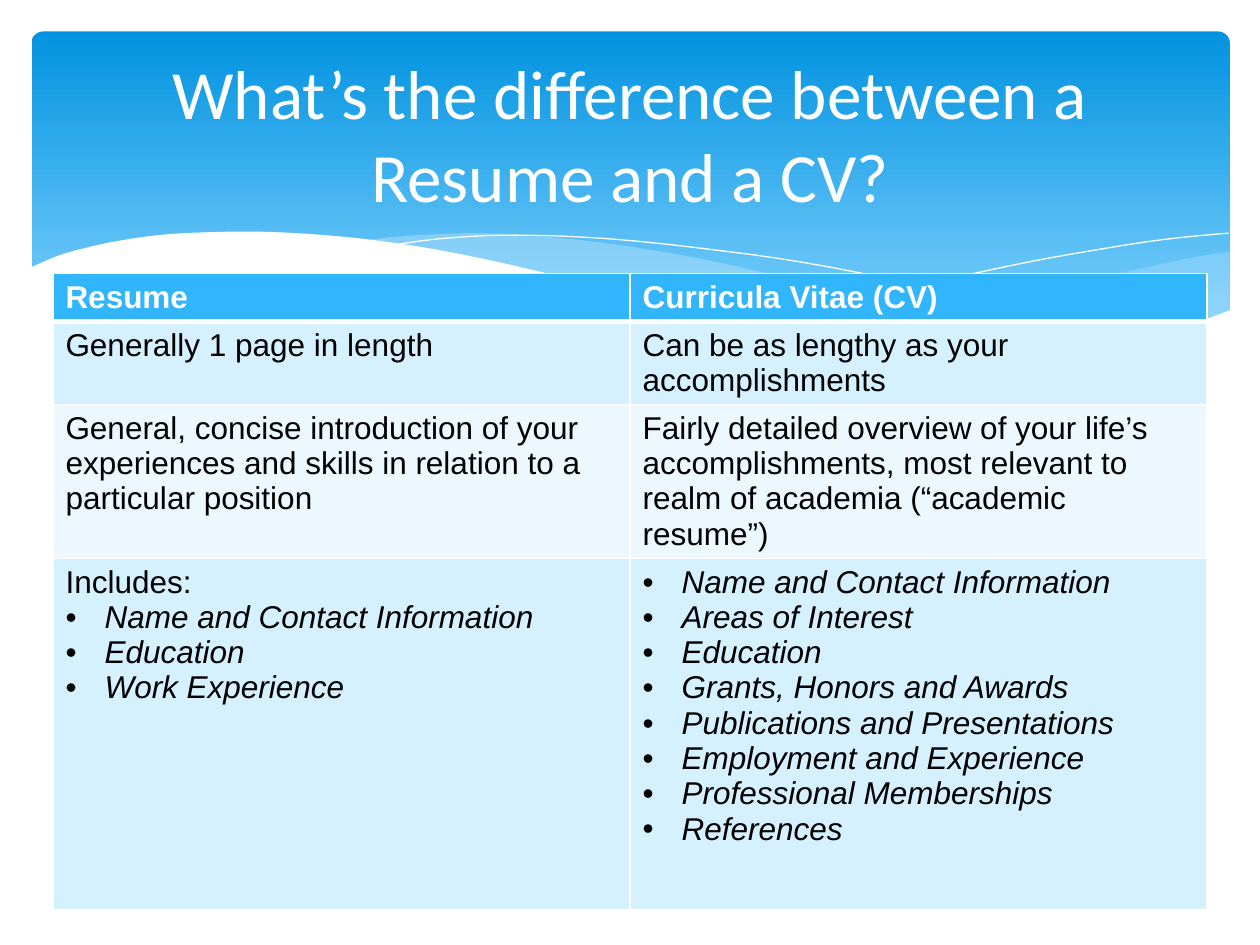
from dataclasses import dataclass

from lxml.etree import SubElement
from pptx import Presentation
from pptx.dml.color import RGBColor
from pptx.enum.shapes import MSO_SHAPE as Preset
from pptx.enum.text import MSO_ANCHOR as Anchor, MSO_AUTO_SIZE as AutoSize, PP_ALIGN as Align
from pptx.oxml import parse_xml
from pptx.oxml.ns import nsdecls, qn
from pptx.util import Inches, Pt


@dataclass(frozen=True)
class Theme:
    white: str = "FFFFFF"
    black: str = "000000"
    banner_top: str = "0293E0"
    banner_bottom: str = "81D2FE"
    wave: str = "C6E7FC"
    header: str = "31B6FD"
    bands: tuple = ("D5F0FE", "ECF8FE")
    title_font: str = "Calibri"
    body_font: str = "Arial"
    title_size: float = 39.5
    body_size: float = 18


THEME = Theme()

RIGHT_WAVE_TOP = [(9.76, 2), (9.48, 2.04), (9.06, 2.13), (8.61, 2.23), (8.05, 2.37), (7.53, 2.48),
                  (7.06, 2.57), (6.61, 2.65)]
RIGHT_WAVE_BOTTOM = [(6.61, 2.65), (7.05, 2.71), (7.57, 2.76), (8.03, 2.78), (8.54, 2.76), (8.97, 2.7),
                     (9.35, 2.62), (9.76, 2.47)]
MIDDLE_WAVE_TOP = [(8.93, 2.73), (8.37, 2.65), (7.75, 2.54), (7.06, 2.4), (6.29, 2.22), (5.69, 2.08),
                   (5.14, 1.98), (4.65, 1.91), (4.2, 1.87), (3.8, 1.85), (3.44, 1.86), (3.13, 1.88), (2.86, 1.91)]
MIDDLE_WAVE_BOTTOM = [(2.86, 1.91), (3.42, 1.99), (4.04, 2.11), (4.49, 2.22), (5.3, 2.4), (6.01, 2.55),
                      (6.65, 2.66), (7.22, 2.74), (7.73, 2.77), (8.18, 2.78), (8.57, 2.77), (8.93, 2.73)]
LONG_LINE = [(3.09, 1.95), (3.44, 1.9), (3.87, 1.87), (4.33, 1.87), (4.89, 1.9), (5.56, 1.97), (6.36, 2.08),
             (7.27, 2.26), (8.31, 2.51), (9.07, 2.72)]
SHORT_LINE = [(6.13, 2.57), (6.53, 2.46), (7.2, 2.29), (8.06, 2.1), (8.66, 1.99), (9.24, 1.9), (9.75, 1.85)]
FRONT_WAVE = [(9.77, 2.46), (9.4, 2.59), (8.99, 2.69), (8.5, 2.75), (8.09, 2.77), (7.61, 2.75), (7.08, 2.7),
              (6.48, 2.62), (5.79, 2.5), (5.03, 2.33), (4.47, 2.2), (3.91, 2.07), (3.4, 1.97), (2.92, 1.9),
              (2.5, 1.86), (2.11, 1.84), (1.77, 1.84), (1.32, 1.86), (0.95, 1.91), (0.67, 1.97), (0.46, 2.03),
              (0.23, 2.13)]
FRONT_BASE = [(0.23, 3.29), (9.77, 3.29)]

ROWS = [
    ("Resume", "Curricula Vitae (CV)"),
    ("Generally 1 page in length", "Can be as lengthy as your accomplishments"),
    ("General, concise introduction of your experiences and skills in relation to a particular position",
     "Fairly detailed overview of your life’s accomplishments, most relevant to realm of academia "
     "(“academic resume”)"),
    ("Includes:\n• Name and Contact Information\n• Education\n• Work Experience",
     "• Name and Contact Information\n• Areas of Interest\n• Education\n• Grants, Honors and Awards\n"
     "• Publications and Presentations\n• Employment and Experience\n• Professional Memberships\n• References"),
]
ROW_HEIGHTS = (0.38, 0.66, 1.22, 2.79)


def rgb(color):
    return RGBColor.from_string(color)


def apply_format(target, values):
    for name, value in values.items():
        setattr(target, name, value)


def format_font(font, color, **values):
    apply_format(font, values)
    font.color.rgb = rgb(color)


def smooth_curve(points, steps=4):
    padded = [points[0], *points, points[-1]]
    curve = [points[0]]
    for a, b, c, d in zip(padded, padded[1:], padded[2:], padded[3:]):
        for step in range(1, steps + 1):
            t = step / steps
            curve.append(tuple(
                q + t * ((r - p) + t * ((2 * p - 5 * q + 4 * r - s) + t * (3 * q - p - 3 * r + s))) / 2
                for p, q, r, s in zip(a, b, c, d)))
    return curve


def add_outline(slide, points, closed):
    corners = [(Inches(x), Inches(y)) for x, y in points]
    builder = slide.shapes.build_freeform(*corners[0], scale=1.0)
    builder.add_line_segments(corners[1:], close=closed)
    shape = builder.convert_to_shape()
    shape.shadow.inherit = False
    return shape


def add_wave(slide, points, color, opacity=100):
    shape = add_outline(slide, points, True)
    shape.fill.solid()
    shape.fill.fore_color.rgb = rgb(color)
    shape.line.fill.background()
    if opacity < 100:
        color_node = shape._element.spPr.find(qn("a:solidFill"))[0]
        SubElement(color_node, qn("a:alpha"), val=str(opacity * 1000))


def add_wave_line(slide, points):
    shape = add_outline(slide, smooth_curve(points), False)
    shape.fill.background()
    shape.line.color.rgb = rgb(THEME.white)
    shape.line.width = Pt(0.75)


def add_banner(slide, left, top, width, height):
    banner = slide.shapes.add_shape(Preset.ROUNDED_RECTANGLE, left, top, width, height)
    banner.adjustments[0] = 0.034
    banner.shadow.inherit = False
    banner.line.fill.background()
    banner.fill.gradient()
    banner.fill.gradient_angle = 270
    stops = zip(banner.fill.gradient_stops, (0, 0.9), (THEME.banner_top, THEME.banner_bottom))
    for stop, position, color in stops:
        stop.position = position
        stop.color.rgb = rgb(color)

    add_wave(slide, smooth_curve(RIGHT_WAVE_TOP) + smooth_curve(RIGHT_WAVE_BOTTOM), THEME.wave, 29)
    add_wave(slide, smooth_curve(MIDDLE_WAVE_TOP) + smooth_curve(MIDDLE_WAVE_BOTTOM), THEME.wave, 40)
    for points in (LONG_LINE, SHORT_LINE):
        add_wave_line(slide, points)
    add_wave(slide, smooth_curve(FRONT_WAVE) + FRONT_BASE, THEME.white)


def place_title(slide, text, left, top, width, height):
    title = slide.shapes.title
    apply_format(title, dict(left=left, top=top, width=width, height=height))
    frame = title.text_frame
    frame.text = text
    apply_format(frame, dict(word_wrap=True, auto_size=AutoSize.NONE, vertical_anchor=Anchor.MIDDLE))
    paragraph = frame.paragraphs[0]
    paragraph.alignment = Align.CENTER
    format_font(paragraph.runs[0].font, THEME.white, name=THEME.title_font, size=Pt(THEME.title_size))
    slide.shapes._spTree.append(title._element)


def set_borders(cell, widths):
    properties = cell._tc.get_or_add_tcPr()
    for index, (side, width) in enumerate(widths.items()):
        properties.insert(index, parse_xml(
            f'<a:ln{side} {nsdecls("a")} w="{Pt(width)}"><a:solidFill>'
            f'<a:srgbClr val="{THEME.white}"/></a:solidFill></a:ln{side}>'))


def add_bullet(paragraph):
    properties = paragraph._p.get_or_add_pPr()
    indent = Inches(0.31)
    apply_values = {"marL": indent, "indent": -indent}
    for name, value in apply_values.items():
        properties.set(name, str(value))
    SubElement(SubElement(properties, qn("a:buClr")), qn("a:srgbClr"), val=THEME.black)
    SubElement(properties, qn("a:buFont"), typeface=THEME.body_font)
    SubElement(properties, qn("a:buChar"), char="•")


def fill_cell(cell, text, row):
    is_header = row == 0
    cell.fill.solid()
    cell.fill.fore_color.rgb = rgb(THEME.header if is_header else THEME.bands[(row - 1) % 2])
    set_borders(cell, {"L": 1, "R": 1, "T": 3 if row == 1 else 1, "B": 3 if is_header else 1})
    lines = text.split("\n")
    cell.text = "\n".join(line.removeprefix("• ") for line in lines)
    for paragraph, line in zip(cell.text_frame.paragraphs, lines):
        is_bullet = line.startswith("• ")
        if is_bullet:
            add_bullet(paragraph)
        format_font(paragraph.runs[0].font, THEME.white if is_header else THEME.black,
                    name=THEME.body_font, size=Pt(THEME.body_size), bold=is_header, italic=is_bullet)


def add_comparison(slide, left, top, width, height):
    table = slide.shapes.add_table(len(ROWS), len(ROWS[0]), left, top, width, height).table
    for row, (texts, row_height) in enumerate(zip(ROWS, ROW_HEIGHTS)):
        table.rows[row].height = Inches(row_height)
        for column, text in enumerate(texts):
            fill_cell(table.cell(row, column), text, row)


def main():
    presentation = Presentation()
    apply_format(presentation, dict(slide_width=Inches(10), slide_height=Inches(7.5)))
    slide = presentation.slides.add_slide(presentation.slide_layouts[5])
    add_banner(slide, Inches(0.25), Inches(0.25), Inches(9.51), Inches(2.7))
    place_title(slide, "What’s the difference between a Resume and a CV?",
                Inches(0.5), Inches(0.37), Inches(9), Inches(1.37))
    add_comparison(slide, Inches(0.42), Inches(2.17), Inches(9.16), Inches(sum(ROW_HEIGHTS)))
    presentation.save("out.pptx")


if __name__ == "__main__":
    main()
